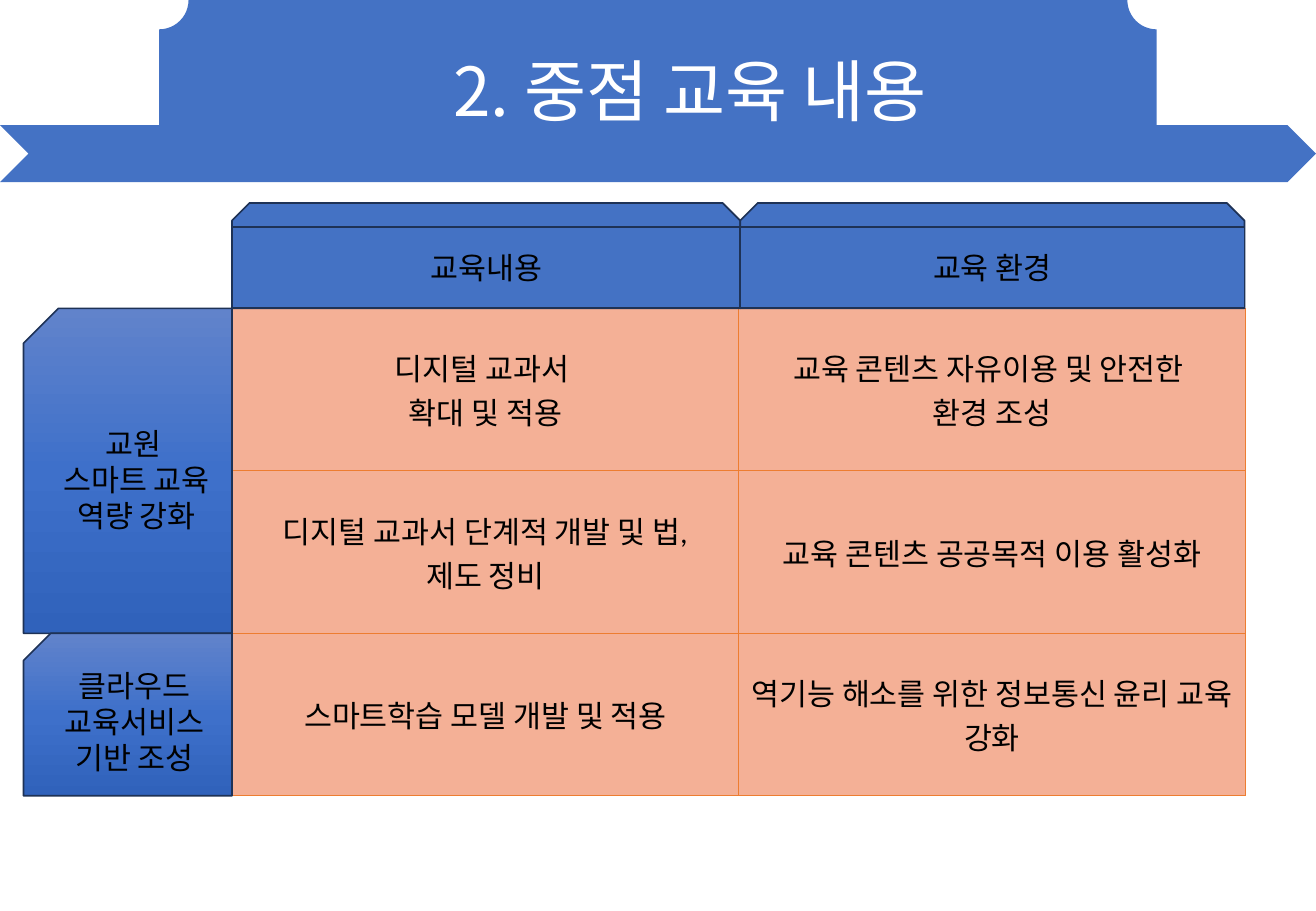
from copy import deepcopy

from lxml.etree import SubElement
from pptx import Presentation
from pptx.dml.color import RGBColor
from pptx.enum.shapes import MSO_SHAPE
from pptx.enum.text import MSO_ANCHOR, PP_ALIGN
from pptx.oxml.ns import qn
from pptx.util import Pt

TITLE = "2. 중점 교육 내용"
HEADERS = ["교육내용", "교육 환경"]
ROWS = [
    ["디지털 교과서 \n확대 및 적용", "교육 콘텐츠 자유이용 및 안전한 \n환경 조성"],
    ["디지털 교과서 단계적 개발 및 법,\n제도 정비", "교육 콘텐츠 공공목적 이용 활성화"],
    ["스마트학습 모델 개발 및 적용", "역기능 해소를 위한 정보통신 윤리 교육 강화"],
]
SIDE_LABELS = [("교원 \n스마트 교육 역량 강화", 2), ("클라우드 교육서비스 기반 조성", 1)]

BLUE = RGBColor(0x44, 0x72, 0xC4)
NAVY = RGBColor(0x1E, 0x32, 0x56)
ORANGE = RGBColor(0xED, 0x7D, 0x31)
PEACH = RGBColor(0xF4, 0xB0, 0x96)
WHITE = RGBColor(0xFF, 0xFF, 0xFF)
BLACK = RGBColor(0x00, 0x00, 0x00)
GRADIENT = [
    (0, RGBColor(0x61, 0x83, 0xCB)),
    (0.5, RGBColor(0x3E, 0x70, 0xCA)),
    (1, RGBColor(0x30, 0x62, 0xBB)),
]
KOREAN = "Noto Sans CJK KR"
LATIN = "Calibri"

PAGE_WIDTH, PAGE_HEIGHT = 779.8, 540
TABLE_LEFT, TABLE_TOP = 137.5, 182.8
COLUMN_WIDTH, ROW_HEIGHT = 300.2, 96.3
HEADER_EDGES = [137.5, 438.6, 737.4]
TAB_TOP, HEADER_TOP = 120.3, 134.6
SIDE_LEFT = 14


def write(frame, text, size, color, font, spacing=None):
    frame.text = text
    frame.word_wrap = True
    for para in frame.paragraphs:
        para.alignment = PP_ALIGN.CENTER
        if spacing:
            para.line_spacing = spacing
        for span in para.runs:
            span.font.size = Pt(size)
            span.font.color.rgb = color
            span.font.name = font
            SubElement(span.font._element, qn("a:ea"), typeface=KOREAN)


def add_block(page, kind, left, top, width, height, outlined=True):
    block = page.shapes.add_shape(kind, Pt(left), Pt(top), Pt(width), Pt(height))
    block.shadow.inherit = False
    block.fill.solid()
    block.fill.fore_color.rgb = BLUE
    if outlined:
        block.line.color.rgb = NAVY
        block.line.width = Pt(1)
    else:
        block.line.fill.background()
    block.text_frame.vertical_anchor = MSO_ANCHOR.MIDDLE
    return block


def shade(block):
    block.fill.gradient()
    block.fill.gradient_angle = 270
    first = block.fill.gradient_stops[0]._gs
    first.addnext(deepcopy(first))
    for stop, (position, color) in zip(block.fill.gradient_stops, GRADIENT):
        stop.position = position
        stop.color.rgb = color


def add_borders(cell):
    properties = cell._tc.get_or_add_tcPr()
    for side in ("lnL", "lnR", "lnT", "lnB"):
        border = SubElement(properties, qn(f"a:{side}"), w=str(Pt(0.5)))
        solid = SubElement(border, qn("a:solidFill"))
        SubElement(solid, qn("a:srgbClr"), val=str(ORANGE))


def add_banner(page):
    add_block(page, MSO_SHAPE.CHEVRON, 0, 74.2, PAGE_WIDTH, 33.8, False)
    add_block(page, MSO_SHAPE.PLAQUE, 94.3, 0, 591.1, 104.4, False)
    box = page.shapes.add_textbox(Pt(72.7), Pt(3.6), Pt(672.5), Pt(104.4))
    box.text_frame.vertical_anchor = MSO_ANCHOR.MIDDLE
    write(box.text_frame, TITLE, 40, WHITE, KOREAN, 0.9)


def add_content_table(page):
    table = page.shapes.add_table(
        len(ROWS), len(HEADERS), Pt(TABLE_LEFT), Pt(TABLE_TOP),
        Pt(COLUMN_WIDTH * len(HEADERS)), Pt(ROW_HEIGHT * len(ROWS)),
    ).table
    for column in table.columns:
        column.width = Pt(COLUMN_WIDTH)
    for row, texts in zip(table.rows, ROWS):
        row.height = Pt(ROW_HEIGHT)
        for cell, text in zip(row.cells, texts):
            write(cell.text_frame, text, 18, BLACK, LATIN)
            cell.vertical_anchor = MSO_ANCHOR.MIDDLE
            add_borders(cell)
            cell.fill.solid()
            cell.fill.fore_color.rgb = PEACH


def add_headers(page):
    for text, left, right in zip(HEADERS, HEADER_EDGES, HEADER_EDGES[1:]):
        width = right - left
        add_block(page, MSO_SHAPE.SNIP_2_SAME_RECTANGLE, left, TAB_TOP, width, TABLE_TOP - TAB_TOP)
        header = add_block(page, MSO_SHAPE.RECTANGLE, left, HEADER_TOP, width, TABLE_TOP - HEADER_TOP)
        write(header.text_frame, text, 18, BLACK, KOREAN)


def add_side_labels(page):
    top = TABLE_TOP
    for text, row_count in SIDE_LABELS:
        height = ROW_HEIGHT * row_count
        label = add_block(page, MSO_SHAPE.SNIP_1_RECTANGLE, SIDE_LEFT, top, TABLE_LEFT - SIDE_LEFT, height)
        label._element.spPr.xfrm.set("flipH", "1")
        shade(label)
        write(label.text_frame, text, 18, BLACK, KOREAN, Pt(21.5))
        top += height


def main():
    deck = Presentation()
    deck.slide_width, deck.slide_height = Pt(PAGE_WIDTH), Pt(PAGE_HEIGHT)
    page = deck.slides.add_slide(deck.slide_layouts[6])
    add_banner(page)
    add_content_table(page)
    add_headers(page)
    add_side_labels(page)
    deck.save("out.pptx")


if __name__ == "__main__":
    main()
